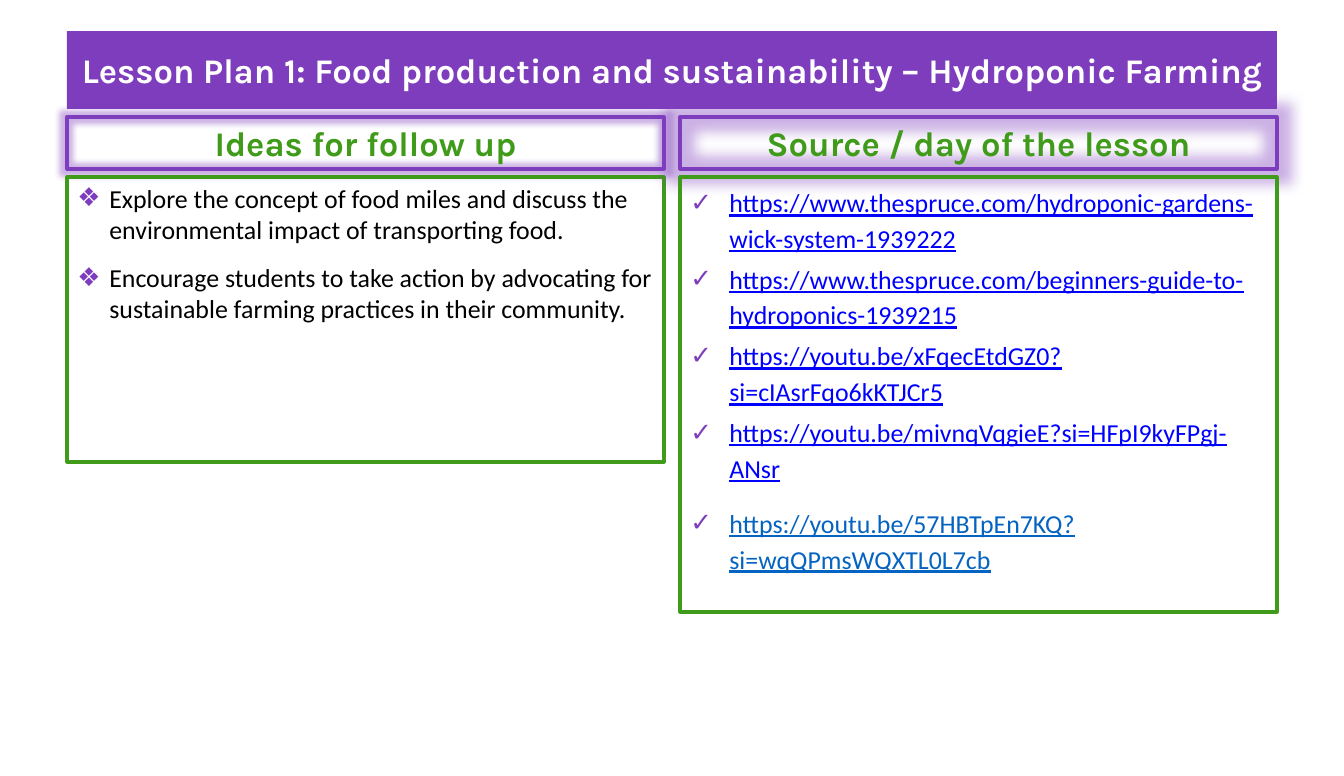
from lxml import etree
from pptx import Presentation
from pptx import util as u
from pptx.dml.color import RGBColor
from pptx.enum import text
from pptx.oxml.ns import qn

# Content
TITLE = "Lesson Plan 1: Food production and sustainability – Hydroponic Farming"
IDEAS = [
    "Explore the concept of food miles and discuss the environmental impact of transporting food.",
    "Encourage students to take action by advocating for sustainable farming practices in their community.",
]
LINKS = [
    "https://www.thespruce.com/hydroponic-gardens-wick-system-1939222",
    "https://www.thespruce.com/beginners-guide-to-hydroponics-1939215",
    "https://youtu.be/xFqecEtdGZ0?si=cIAsrFqo6kKTJCr5",
    "https://youtu.be/mivnqVqgieE?si=HFpI9kyFPgj-ANsr",
    "https://youtu.be/57HBTpEn7KQ?si=wqQPmsWQXTL0L7cb",
]
COLUMNS = [
    dict(head="Ideas for follow up", glow=8, items=IDEAS, height=285, bullet="❖", indent=32,
         align=text.PP_ALIGN.LEFT, spacing=1.0, before=6, after=[6, 6],
         colors=["black"] * 2, underline=False),
    dict(head="Source / day of the lesson", glow=18, items=LINKS, height=435, bullet="✓", indent=39,
         align=text.PP_ALIGN.JUSTIFY, spacing=1.15, before=3.6, after=[0, 0, 0, 10, 10],
         colors=["link"] * 4 + ["last_link"], underline=True),
]
COLORS = dict(purple="7E3DBC", green="409B1B", white="FFFFFF", black="000000",
              link="0000FF", last_link="0563C1")

# Layout in px
SCALE = 914400 / 103.5
SLIDE_W, SLIDE_H = 1344, 776
LEFT, WIDTH = 67, 1210
TITLE_Y, TITLE_H = 31, 78
COL_W, HEAD_H, GAP = 597, 52, 8
HEAD_Y = TITLE_Y + TITLE_H + GAP
BODY_Y = HEAD_Y + HEAD_H + GAP


def px(n):
    return u.Emu(round(n * SCALE))


def rgb(name):
    return RGBColor.from_string(COLORS[name])


def place(sp, x, y, w, h, anchor, border=None):
    sp.left, sp.top, sp.width, sp.height = px(x), px(y), px(w), px(h)
    tf = sp.text_frame
    tf.word_wrap = True
    tf.auto_size = text.MSO_AUTO_SIZE.NONE
    tf.vertical_anchor = anchor
    if border:
        sp.line.color.rgb = rgb(border)
        sp.line.width = u.Pt(2.25)


def style(p, font, size, color, bold=False, underline=False):
    for r in p.runs:
        r.font.name, r.font.size = font, u.Pt(size)
        r.font.bold, r.font.underline = bold, underline
        r.font.color.rgb = rgb(color)


def heading(sp, words, color):
    sp.text_frame.text = words
    p = sp.text_frame.paragraphs[0]
    p.alignment = text.PP_ALIGN.CENTER
    p.space_before = u.Pt(0)
    style(p, "Karla", 24, color, bold=True)


def add_glow(sp, radius):
    effects = etree.SubElement(sp.element.spPr, qn("a:effectLst"))
    glow = etree.SubElement(effects, qn("a:glow"), rad=str(u.Pt(radius)))
    color = etree.SubElement(glow, qn("a:srgbClr"), val=COLORS["purple"])
    etree.SubElement(color, qn("a:alpha"), val="40000")


def add_bullet(p, char, indent):
    pPr = p._p.get_or_add_pPr()
    pPr.set("marL", str(px(indent)))
    pPr.set("indent", str(-px(indent)))
    color = etree.SubElement(pPr, qn("a:buClr"))
    etree.SubElement(color, qn("a:srgbClr"), val=COLORS["purple"])
    etree.SubElement(pPr, qn("a:buChar"), char=char)


def fill_list(sp, col):
    tf = sp.text_frame
    for i, item in enumerate(col["items"]):
        p = tf.paragraphs[0] if i == 0 else tf.add_paragraph()
        p.text = item
        add_bullet(p, col["bullet"], col["indent"])
        p.alignment = col["align"]
        p.line_spacing = col["spacing"]
        p.space_before = u.Pt(col["before"] if i else 0)
        p.space_after = u.Pt(col["after"][i])
        style(p, "Calibri", 18, col["colors"][i], underline=col["underline"])


def main():
    prs = Presentation()
    prs.slide_width, prs.slide_height = px(SLIDE_W), px(SLIDE_H)
    s = prs.slides.add_slide(prs.slide_layouts.get_by_name("Comparison"))

    # Title banner
    title = s.shapes.title
    place(title, LEFT, TITLE_Y, WIDTH, TITLE_H, text.MSO_ANCHOR.MIDDLE)
    title.fill.solid()
    title.fill.fore_color.rgb = rgb("purple")
    heading(title, TITLE, "white")

    # Two columns: glowing heading above a bulleted list
    boxes = list(s.placeholders)[1:]
    for i, col in enumerate(COLUMNS):
        head, body = boxes[2 * i:2 * i + 2]
        x = LEFT + i * (WIDTH - COL_W)
        place(head, x, HEAD_Y, COL_W, HEAD_H, text.MSO_ANCHOR.TOP, "purple")
        add_glow(head, col["glow"])
        heading(head, col["head"], "green")
        place(body, x, BODY_Y, COL_W, col["height"], text.MSO_ANCHOR.TOP, "green")
        fill_list(body, col)

    prs.save("out.pptx")


if __name__ == "__main__":
    main()
